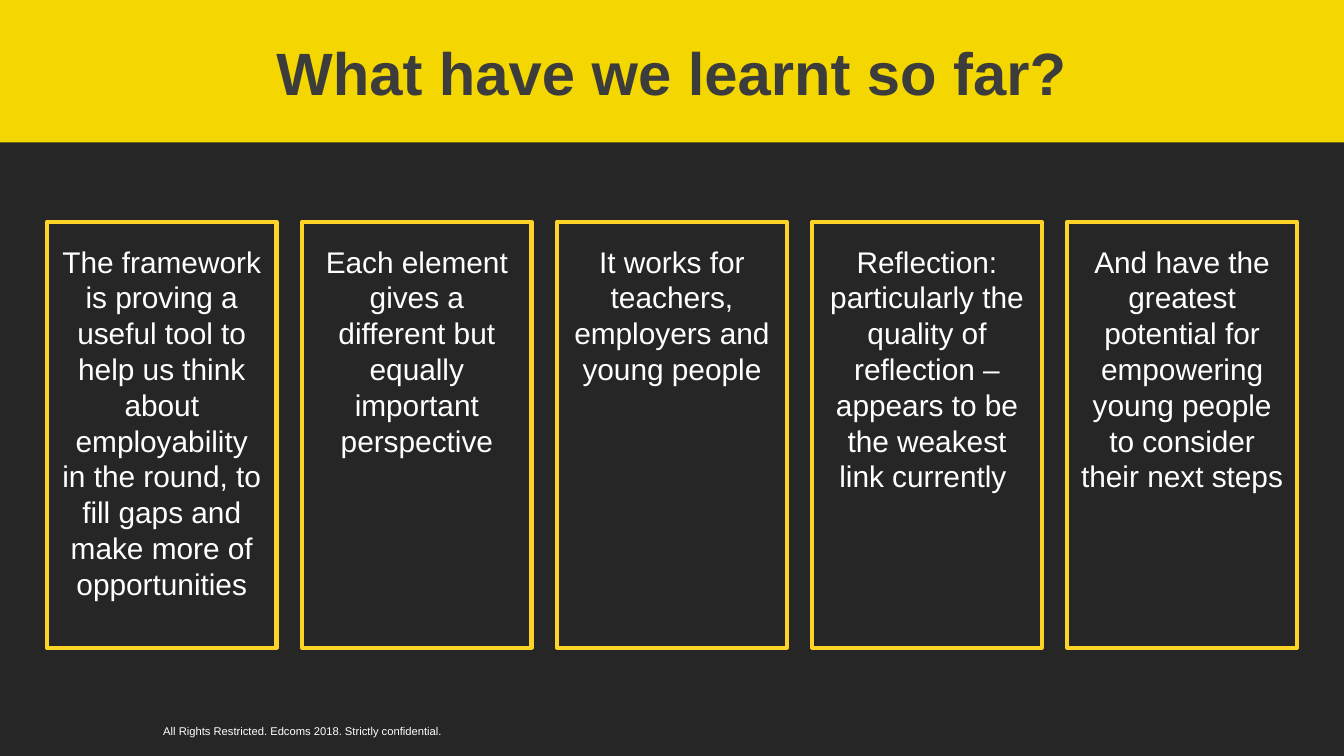
from pptx import Presentation
from pptx import util as u
from pptx.dml.color import RGBColor
from pptx.enum import shapes, text

CHARCOAL = RGBColor(0x26, 0x26, 0x26)
YELLOW = RGBColor(0xF4, 0xD6, 0x00)
AMBER = RGBColor(0xFE, 0xD3, 0x28)
GREY = RGBColor(0x3C, 0x3C, 0x3C)
WHITE = RGBColor(0xFF, 0xFF, 0xFF)

WIDTH = 10
HEIGHT = WIDTH * 9 / 16
LESSONS = [
    "The framework is proving a useful tool to help us think about employability "
    "in the round, to fill gaps and make more of opportunities",
    "Each element gives a different but equally important perspective",
    "It works for teachers, employers and young people",
    "Reflection: particularly the quality of reflection – appears to be "
    "the weakest link currently ",
    "And have the greatest potential for empowering young people "
    "to consider their next steps",
]


def inches(box):
    return [u.Inches(length) for length in box]


def set_values(target, values):
    for name, value in values.items():
        setattr(target, name, value)


def write(frame, words, size, color, margins=(0, 0, 0, 0), wrap=True,
          anchor=text.MSO_ANCHOR.MIDDLE, bold=False):
    """Fill a text frame with one centred paragraph; margins run left, top, right, bottom."""
    sides = ("margin_left", "margin_top", "margin_right", "margin_bottom")
    set_values(frame, dict(zip(sides, inches(margins))))
    set_values(frame, {"word_wrap": wrap, "vertical_anchor": anchor})
    paragraph = frame.paragraphs[0]
    paragraph.alignment = text.PP_ALIGN.CENTER
    run = paragraph.add_run()
    run.text = words
    set_values(run.font, {"name": "Arial", "size": u.Pt(size), "bold": bold})
    run.font.color.rgb = color


def add_rectangle(slide, box):
    rectangle = slide.shapes.add_shape(shapes.MSO_SHAPE.RECTANGLE, *inches(box))
    rectangle.shadow.inherit = False
    return rectangle


def add_header(slide, box):
    left, top, width, height = box
    band = add_rectangle(slide, box)
    band.fill.solid()
    band.fill.fore_color.rgb = YELLOW
    band.line.fill.background()
    title_box = (left + 0.19 * width, top + 0.32 * height, 0.62 * width, 0.37 * height)
    title = slide.shapes.add_textbox(*inches(title_box))
    write(title.text_frame, "What have we learnt so far?", 32, GREY, wrap=False, bold=True)


def add_lessons(slide, box, gap):
    """Place the lessons in equal outlined columns across the box."""
    left, top, width, height = box
    column = (width - gap * (len(LESSONS) - 1)) / len(LESSONS)
    for index, lesson in enumerate(LESSONS):
        card = add_rectangle(slide, (left + index * (column + gap), top, column, height))
        card.fill.background()
        card.line.color.rgb = AMBER
        card.line.width = u.Pt(2.25)
        write(card.text_frame, lesson, 16, WHITE, margins=(0.1, 0.16, 0.1, 0.05),
              anchor=text.MSO_ANCHOR.TOP)


def add_footer(slide, box):
    footer = slide.shapes.add_textbox(*inches(box))
    write(footer.text_frame, "All Rights Restricted. Edcoms 2018. Strictly confidential.",
          6, WHITE, wrap=False)


def main():
    deck = Presentation()
    set_values(deck, {"slide_width": u.Inches(WIDTH), "slide_height": u.Inches(HEIGHT)})
    slide = deck.slides.add_slide(deck.slide_layouts[6])
    slide.background.fill.solid()
    slide.background.fill.fore_color.rgb = CHARCOAL
    add_footer(slide, (1.15, 5.31, 2.2, 0.26))
    add_header(slide, (0, 0, WIDTH, 1.06))
    add_lessons(slide, (0.35, 1.65, WIDTH - 2 * 0.35, 3.17), gap=0.19)
    deck.save("out.pptx")


if __name__ == "__main__":
    main()
